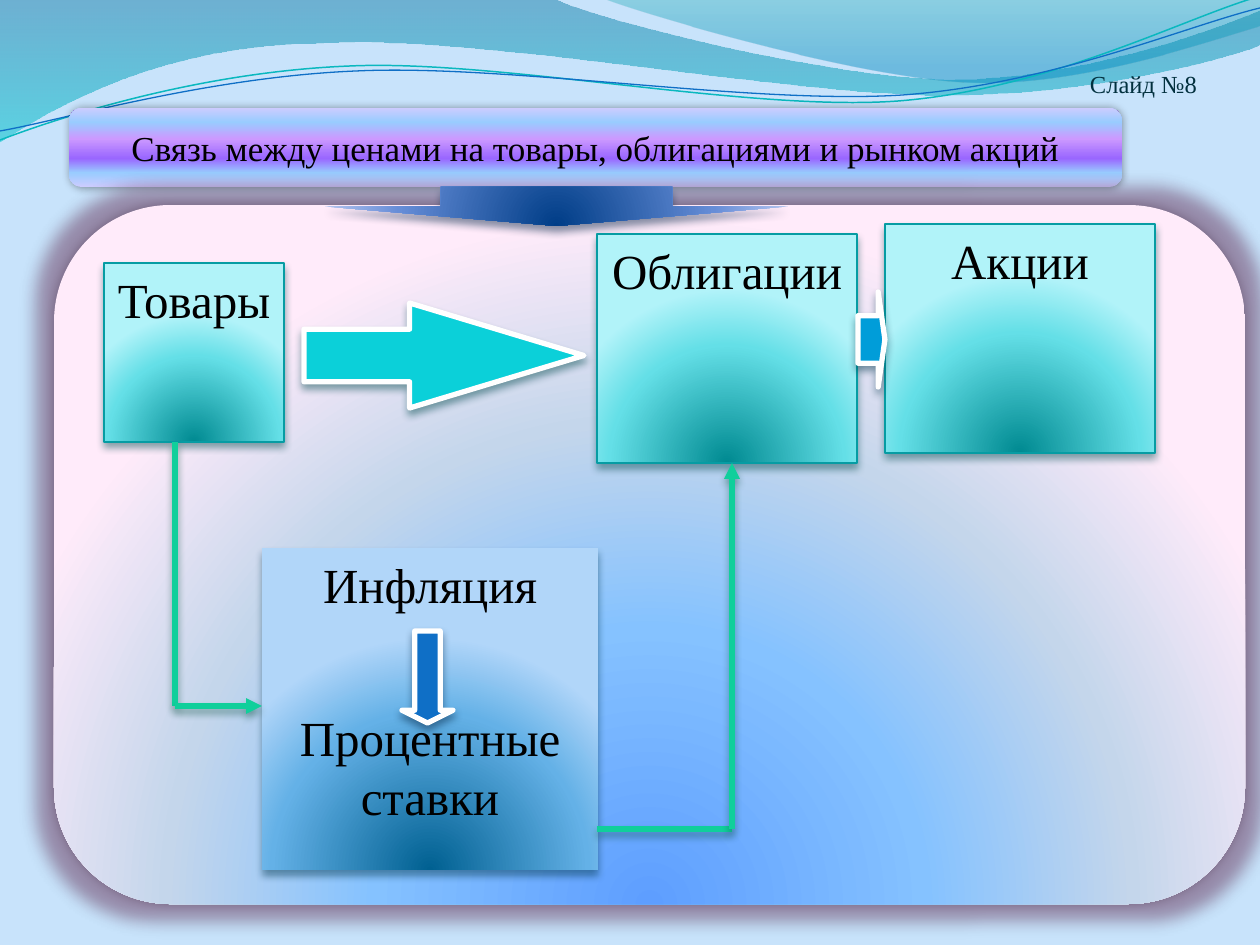
from dataclasses import dataclass
from typing import NamedTuple, Optional

from lxml.etree import SubElement
from pptx import Presentation
from pptx.dml.color import RGBColor
from pptx.enum.shapes import MSO_CONNECTOR, MSO_SHAPE
from pptx.enum.text import MSO_ANCHOR, PP_ALIGN
from pptx.oxml.ns import qn
from pptx.util import Emu, Pt

SCALE = 914400 / 126
FONT = "Times New Roman"

BLACK = RGBColor(0x00, 0x00, 0x00)
WHITE = RGBColor(0xFF, 0xFF, 0xFF)
SKY = RGBColor(0xC8, 0xE3, 0xFB)
INK = RGBColor(0x02, 0x30, 0x3E)
PLUM = RGBColor(0x7A, 0x3A, 0x6A)
NAVY = RGBColor(0x04, 0x27, 0x47)
PINE = RGBColor(0x02, 0x4B, 0x4E)
DEEP = RGBColor(0x00, 0x37, 0x4C)
MOSS = RGBColor(0x04, 0x4A, 0x37)
GREEN = RGBColor(0x10, 0xCF, 0x9B)
BLUE = RGBColor(0x0F, 0x6F, 0xC6)
AZURE = RGBColor(0x00, 0x9D, 0xD9)
CYAN = RGBColor(0x0B, 0xD0, 0xD9)
AQUA = RGBColor(0x0A, 0xB8, 0xBF)
TEAL = RGBColor(0x06, 0x9C, 0xA3)
LILAC = RGBColor(0xCC, 0xCC, 0xFF)
LIGHT = RGBColor(0x99, 0xCC, 0xFF)


class Stop(NamedTuple):
    pos: int
    color: RGBColor
    alpha: int = 100


@dataclass
class Grad:
    stops: list
    angle: int = 90
    focus: Optional[int] = None  # height of a radial centre, in percent


@dataclass
class Part:
    kind: MSO_SHAPE
    area: tuple
    fill: object
    shade: RGBColor
    edge: Optional[RGBColor] = None
    width: float = 0.75
    adjust: tuple = ()
    words: tuple = ()
    glow: Optional[RGBColor] = None


@dataclass
class Wave:
    start: tuple
    sides: list  # (control, control, end) for a curve, (end,) for a straight side
    fill: Optional[Grad] = None
    edge: Optional[RGBColor] = None
    width: float = 0.75


def radial(*colors: str) -> Grad:
    tones = [RGBColor.from_string(c) for c in colors]
    return Grad([Stop(p, c) for p, c in zip((0, 68, 100), tones)], focus=130)


MINT = radial("008A91", "64DFE7", "B1F3F9")
STEEL = radial("006091", "64B1E7", "B1D6F9")
ROYAL = radial("003D87", "668DD7", "B3C4EF")
BAND = Grad([Stop(0, LILAC), Stop(18, LIGHT), Stop(36, RGBColor(0x99, 0x66, 0xFF)),
             Stop(61, RGBColor(0xCC, 0x99, 0xFF)), Stop(82, LIGHT), Stop(100, LILAC)], 270)
DAWN = Grad([Stop(0, RGBColor(0x5E, 0x9E, 0xFF)), Stop(40, RGBColor(0x85, 0xC2, 0xFF)),
             Stop(70, RGBColor(0xC4, 0xD6, 0xEB)), Stop(100, RGBColor(0xFF, 0xEB, 0xFA))],
            focus=100)
SEA = Grad([Stop(0, RGBColor(0x00, 0x74, 0xA1), 45), Stop(100, RGBColor(0x00, 0xC6, 0xCF), 55)])
SURF = Grad([Stop(0, RGBColor(0x00, 0xA1, 0xA9), 30), Stop(80, RGBColor(0x00, 0x8B, 0xBF), 45)])

WAVES = [
    Wave((0, -1), [((554, -1),), ((600, 21), (837, 79), (955, 79)),
                   ((1074, 79), (1207, 33), (1260, 11)), ((1261, 45),),
                   ((1239, 55), (1096, 96), (940, 95)), ((784, 95), (481, 35), (324, 43)),
                   ((163, 44), (58, 105), (-1, 142))], SEA),
    Wave((604, -1), [((641, 14), (859, 78), (969, 82)), ((1079, 87), (1211, 40), (1260, 26)),
                     ((1260, 0),)], SURF),
    Wave((0, 140), [((60, 117), (199, 72), (349, 66)), ((498, 59), (747, 112), (898, 101)),
                    ((1050, 89), (1182, 19), (1257, -3))], edge=AQUA, width=0.85),
    Wave((0, 131), [((59, 121), (207, 77), (357, 71)), ((508, 64), (752, 105), (903, 95)),
                    ((1053, 84), (1186, 26), (1260, 8))], edge=BLUE),
]

HEAD = Part(MSO_SHAPE.ROUNDED_RECTANGLE, (69, 108, 1053, 79), BAND, BLACK)
LOWER = [
    Part(MSO_SHAPE.ROUNDED_RECTANGLE, (54, 205, 1191, 699), DAWN, BLACK, glow=PLUM),
    Part(MSO_SHAPE.DOWN_ARROW, (325, 187, 463, 39), ROYAL, NAVY, adjust=(0.5, 0.5)),
    Part(MSO_SHAPE.RECTANGLE, (104, 263, 180, 179), MINT, PINE, TEAL, words=("Товары",)),
    Part(MSO_SHAPE.RECTANGLE, (262, 548, 336, 322), STEEL, DEEP,
         words=("Инфляция", "Процентные ставки")),
    Part(MSO_SHAPE.RECTANGLE, (597, 234, 260, 229), MINT, PINE, TEAL, words=("Облигации",)),
    Part(MSO_SHAPE.DOWN_ARROW, (402, 631, 51, 92), BLUE, NAVY, WHITE, 3, (0.5, 0.25)),
]
UPPER = [
    Part(MSO_SHAPE.RIGHT_ARROW, (304, 303, 280, 105), CYAN, PINE, WHITE, 3, (0.5, 1.66)),
    Part(MSO_SHAPE.RECTANGLE, (885, 224, 270, 229), MINT, PINE, TEAL, words=("Акции",)),
    Part(MSO_SHAPE.RIGHT_ARROW, (858, 292, 27, 95), AZURE, DEEP, WHITE, 3, (0.5, 0.25)),
]


def px(size: float) -> Emu:
    return Emu(round(size * SCALE))


def tint(node, color: RGBColor, alpha: int) -> None:
    tone = SubElement(node, qn("a:srgbClr"), val=str(color))
    SubElement(tone, qn("a:alpha"), val=str(alpha * 1000))


def paint(shape, fill, edge: Optional[RGBColor], width: float) -> None:
    if isinstance(fill, Grad):
        shape.fill.gradient()
        node = shape.element.spPr.find(qn("a:gradFill"))
        for child in list(node):
            node.remove(child)
        stops = SubElement(node, qn("a:gsLst"))
        for stop in fill.stops:
            tint(SubElement(stops, qn("a:gs"), pos=str(stop.pos * 1000)), stop.color, stop.alpha)
        if fill.focus is None:
            SubElement(node, qn("a:lin"), ang=str(fill.angle * 60000), scaled="0")
        else:
            ring = SubElement(node, qn("a:path"), {"path": "circle"})
            SubElement(ring, qn("a:fillToRect"), l="50000", r="50000",
                       t=str(fill.focus * 1000), b=str((100 - fill.focus) * 1000))
    elif fill is None:
        shape.fill.background()
    else:
        shape.fill.solid()
        shape.fill.fore_color.rgb = fill
    if edge is None:
        shape.line.fill.background()
    else:
        shape.line.color.rgb = edge
        shape.line.width = Pt(width)


def shade(shape, color: RGBColor, glow: Optional[RGBColor] = None) -> None:
    effects = SubElement(shape.element.spPr, qn("a:effectLst"))
    if glow is not None:
        tint(SubElement(effects, qn("a:glow"), rad=str(Pt(18))), glow, 40)
    soft = color == BLACK
    cast = SubElement(effects, qn("a:outerShdw"), blurRad=str(Pt(5 if soft else 4.5)),
                      dist=str(Pt(0 if soft else 3)), dir="5400000", rotWithShape="0")
    tint(cast, color, 40 if soft else 48)


def write(shape, *lines: str, size: int = 28, color: RGBColor = BLACK,
          align: PP_ALIGN = PP_ALIGN.CENTER, anchor: MSO_ANCHOR = MSO_ANCHOR.TOP,
          gap: int = 0, after: int = 0) -> None:
    frame = shape.text_frame
    frame.word_wrap = True
    frame.vertical_anchor = anchor
    for i, line in enumerate(lines):
        para = frame.add_paragraph() if i else frame.paragraphs[0]
        para.alignment = align
        para.space_before = Pt(gap if i else 0)
        para.space_after = Pt(after)
        run = para.add_run()
        run.text = line
        run.font.name, run.font.size, run.font.color.rgb = FONT, Pt(size), color


def draw(slide, part: Part):
    shape = slide.shapes.add_shape(part.kind, *map(px, part.area))
    for i, value in enumerate(part.adjust):
        shape.adjustments[i] = value
    paint(shape, part.fill, part.edge, part.width)
    shade(shape, part.shade, part.glow)
    if part.words:
        write(shape, *part.words, gap=44, after=10)
    return shape


def ripple(slide, wave: Wave) -> None:
    ends = [side[-1] for side in wave.sides]
    pen = slide.shapes.build_freeform(*wave.start, scale=SCALE)
    pen.add_line_segments(ends, close=wave.fill is not None)
    shape = pen.convert_to_shape()
    left, top = (min(axis) for axis in zip(wave.start, *ends))
    # Turn the straight sides that have control points into curves
    track = next(shape.element.spPr.iter(qn("a:path")))
    for node, side in zip(track.findall(qn("a:lnTo")), wave.sides):
        if len(side) == 3:
            curve = SubElement(track, qn("a:cubicBezTo"))
            for x, y in side:
                SubElement(curve, qn("a:pt"), x=str(x - left), y=str(y - top))
            track.replace(node, curve)
    shape.shadow.inherit = False
    paint(shape, wave.fill, wave.edge, wave.width)


def link(slide, start: tuple, end: tuple, arrow: bool = False) -> None:
    line = slide.shapes.add_connector(MSO_CONNECTOR.STRAIGHT, *map(px, start + end))
    line.line.color.rgb = GREEN
    line.line.width = Pt(3)
    if arrow:
        SubElement(line.element.spPr.find(qn("a:ln")), qn("a:tailEnd"), type="triangle")
    shade(line, MOSS)


def main() -> None:
    deck = Presentation()
    deck.slide_width, deck.slide_height = px(1260), px(945)
    slide = deck.slides.add_slide(deck.slide_layouts[6])
    slide.background.fill.solid()
    slide.background.fill.fore_color.rgb = SKY

    # Waves along the top
    for wave in WAVES:
        ripple(slide, wave)

    # Slide number and heading
    label = slide.shapes.add_textbox(*map(px, (63, 39, 1134, 59)))
    frame = label.text_frame
    frame.margin_left = frame.margin_right = frame.margin_bottom = 0
    write(label, "Слайд №8", size=14, color=INK, align=PP_ALIGN.RIGHT, anchor=MSO_ANCHOR.BOTTOM)
    write(draw(slide, HEAD), "Связь между ценами на товары, облигациями и рынком акций",
          size=20, anchor=MSO_ANCHOR.MIDDLE)

    # Panel and boxes
    for part in LOWER:
        draw(slide, part)

    # Bent links: goods to rates, rates to bonds
    for corner, start, end in (((175, 706), (175, 442), (262, 706)),
                               ((732, 829), (597, 829), (732, 463))):
        link(slide, start, corner)
        link(slide, corner, end, arrow=True)

    # Stocks and the arrows between the boxes
    for part in UPPER:
        draw(slide, part)

    deck.save("out.pptx")


if __name__ == "__main__":
    main()
